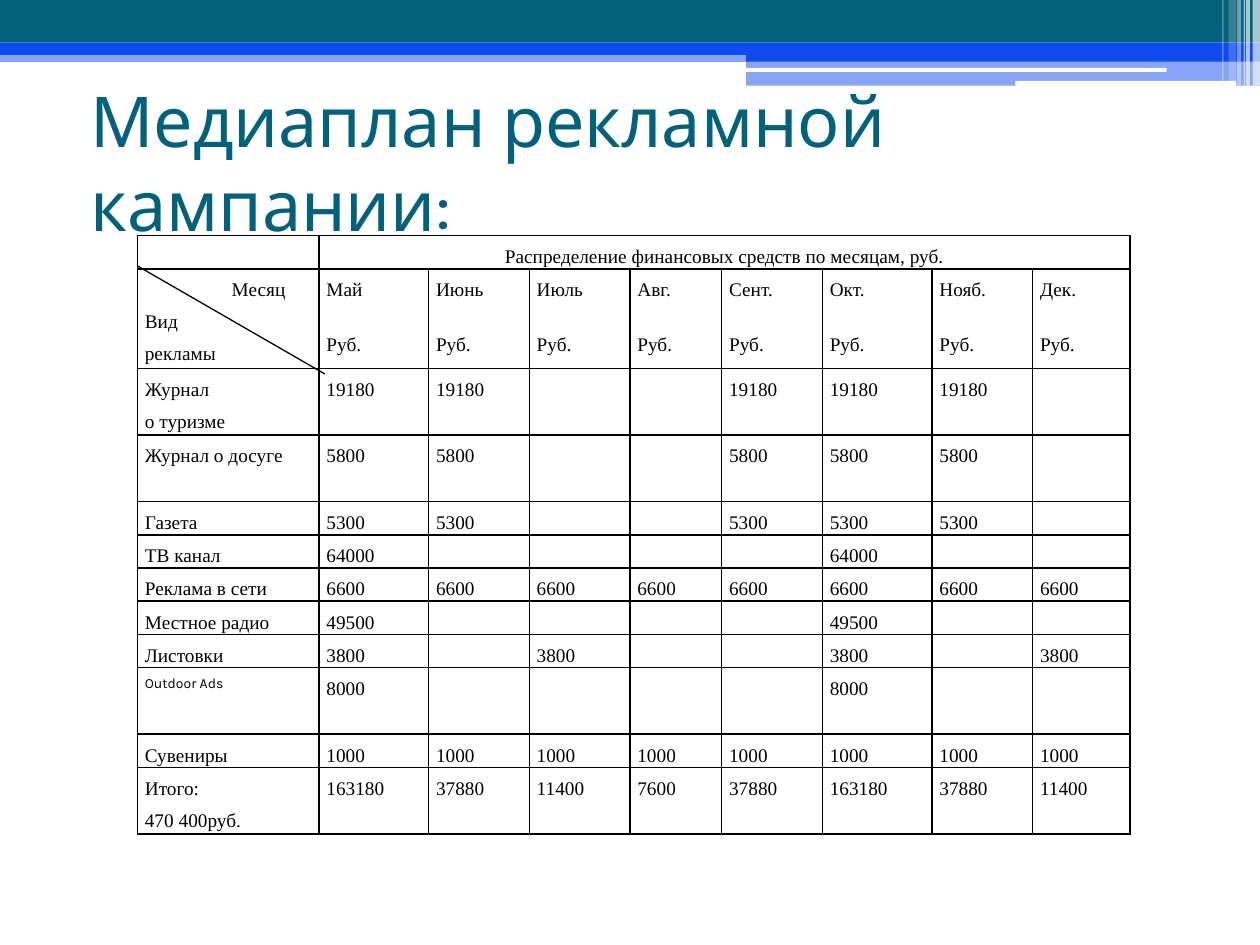
from lxml.etree import SubElement
from pptx import Presentation
from pptx.dml.color import RGBColor
from pptx.enum.shapes import MSO_CONNECTOR, MSO_SHAPE
from pptx.enum.text import MSO_ANCHOR, PP_ALIGN
from pptx.oxml.ns import qn
from pptx.util import Cm, Pt

TEAL, BLUE, WHITE, BLACK = "04617B", "104BF0", "FFFFFF", "000000"
SERIF = {"size": Pt(11), "name": "Times New Roman"}
SMALL = {"size": Pt(8), "name": "Karla"}
TITLE = {"size": Pt(40), "name": "Karla"}

# left, top, width, height, colour, opacity
BANDS = [
    (0, 1.02, 25.4, 0.23, BLUE, 50),
    (0, 0, 25.4, 0.86, TEAL, 100),
    (0, 0.86, 25.4, 0.25, BLUE, 100),
    (15.04, 0.99, 10.36, 0.25, BLUE, 100),
    (15.04, 1.22, 10.36, 0.51, BLUE, 50),
]
PILLS = [(15.01, 1.37, 8.51, 0.08), (20.47, 1.63, 4.45, 0.1)]
# left, width, height, opacity
STRIPES = [
    (25.25, 0.15, 1.73, 65), (25.12, 0.08, 1.73, 65), (25.07, 0.03, 1.73, 60),
    (24.94, 0.08, 1.73, 40), (24.77, 0.15, 1.63, 20), (24.64, 0.03, 1.63, 30),
]

COLS = [3.66, 2.21, 2.03, 2.03, 1.85, 2.03, 2.21, 2.03, 1.96]
LINE = 0.67  # height of one text line
MONTHS = ["Май", "Июнь", "Июль", "Авг.", "Сент.", "Окт.", "Нояб.", "Дек."]
# name, number of lines, values by month
ROWS = [
    ("Журнал\nо туризме", 2, "19180 19180 - - 19180 19180 19180 -"),
    ("Журнал о досуге", 2, "5800 5800 - - 5800 5800 5800 -"),
    ("Газета", 1, "5300 5300 - - 5300 5300 5300 -"),
    ("ТВ канал", 1, "64000 - - - - 64000 - -"),
    ("Реклама в сети", 1, "6600 6600 6600 6600 6600 6600 6600 6600"),
    ("Местное радио", 1, "49500 - - - - 49500 - -"),
    ("Листовки", 1, "3800 - 3800 - - 3800 - 3800"),
    ("Outdoor Ads", 2, "8000 - - - - 8000 - -"),
    ("Сувениры", 1, "1000 1000 1000 1000 1000 1000 1000 1000"),
    ("Итого:\n470 400руб.", 2,
     "163180 37880 11400 7600 37880 163180 37880 11400"),
]


def paint(fill, tint):
    fill.solid()
    fill.fore_color.rgb = RGBColor.from_string(tint)


def style(font, look, tint=BLACK):
    for key, value in look.items():
        setattr(font, key, value)
    font.color.rgb = RGBColor.from_string(tint)


def block(slide, kind, box, tint, alpha=100):
    shape = slide.shapes.add_shape(kind, *map(Cm, box))
    shape.shadow.inherit = False
    shape.line.fill.background()
    paint(shape.fill, tint)
    if alpha < 100:
        clr = shape.fill._xPr.find(".//" + qn("a:srgbClr"))
        SubElement(clr, qn("a:alpha"), val=str(alpha * 1000))


def header(slide, x, y):
    for left, top, wide, high, tint, alpha in BANDS:
        block(slide, MSO_SHAPE.RECTANGLE, (x + left, y + top, wide, high),
              tint, alpha)
    for left, top, wide, high in PILLS:
        block(slide, MSO_SHAPE.ROUNDED_RECTANGLE,
              (x + left, y + top, wide, high), WHITE)
    for left, wide, high, alpha in STRIPES:
        block(slide, MSO_SHAPE.RECTANGLE, (x + left, y, wide, high),
              WHITE, alpha)


def title(slide, box, text):
    frame = slide.shapes.add_textbox(*map(Cm, box)).text_frame
    frame.word_wrap = True
    frame.vertical_anchor = MSO_ANCHOR.MIDDLE
    run = frame.paragraphs[0].add_run()
    run.text = text
    style(run.font, TITLE, TEAL)


def border(cell):
    props = cell._tc.get_or_add_tcPr()
    for side in ("a:lnL", "a:lnR", "a:lnT", "a:lnB"):
        line = SubElement(props, qn(side), w=str(Pt(1)))
        fill = SubElement(line, qn("a:solidFill"))
        SubElement(fill, qn("a:srgbClr"), val=BLACK)


def write(cell, text="", look=SERIF, align=PP_ALIGN.JUSTIFY):
    margins = {"margin_left": Cm(0.15), "margin_right": Cm(0.15),
               "margin_top": 0, "margin_bottom": 0}
    for key, value in margins.items():
        setattr(cell, key, value)
    border(cell)
    cell.fill.background()
    frame = cell.text_frame
    for i, words in enumerate(text.split("\n")):
        para = frame.add_paragraph() if i else frame.paragraphs[0]
        para.alignment = align
        # one and a half lines of the cell's font
        para.line_spacing = Pt(18.3 if look is SERIF else 14)
        if words:
            run = para.add_run()
            run.text = words
            style(run.font, look)
        else:
            # keeps empty cells from stretching their row
            SubElement(para._p, qn("a:endParaRPr"), sz="1100")


def plan(slide, x, y):
    lines = [1, 3] + [row[1] for row in ROWS]
    grid = slide.shapes.add_table(
        len(lines), len(COLS), Cm(x), Cm(y),
        Cm(sum(COLS)), Cm(LINE * sum(lines))).table
    grid.first_row = grid.horz_banding = False
    for col, wide in zip(grid.columns, COLS):
        col.width = Cm(wide)
    for row, count in zip(grid.rows, lines):
        row.height = Cm(LINE * count)

    # Heading row
    write(grid.cell(0, 0))
    write(grid.cell(0, 1), "Распределение финансовых средств по месяцам, руб.",
          align=PP_ALIGN.CENTER)
    for c in range(2, len(COLS)):
        write(grid.cell(0, c))
    grid.cell(0, 1).merge(grid.cell(0, len(COLS) - 1))

    # Month row
    corner = grid.cell(1, 0)
    write(corner, "Месяц\nВид\nрекламы")
    first = corner.text_frame.paragraphs[0]._p.get_or_add_pPr()
    first.set("marL", str(Cm(1.75)))
    for c, month in enumerate(MONTHS, 1):
        cell = grid.cell(1, c)
        write(cell, month + "\nРуб.")
        cell.text_frame.paragraphs[1].space_before = Pt(13)

    # Spending rows
    for r, (name, _, values) in enumerate(ROWS, 2):
        write(grid.cell(r, 0), name, SMALL if "Outdoor" in name else SERIF)
        for c, value in enumerate(values.split(), 1):
            write(grid.cell(r, c), value.strip("-"))

    # Diagonal of the corner cell
    line = slide.shapes.add_connector(
        MSO_CONNECTOR.STRAIGHT, Cm(x), Cm(y + 0.61),
        Cm(x + 3.78), Cm(y + 2.79))
    line.line.width = Pt(0.75)
    paint(line.line.fill, BLACK)
    SubElement(line._element.spPr, qn("a:effectLst"))


def main():
    deck = Presentation()
    deck.slide_width, deck.slide_height = Cm(25.4), Cm(19.05)
    slide = deck.slides.add_slide(deck.slide_layouts[6])
    paint(slide.background.fill, WHITE)
    header(slide, 0, 0)
    title(slide, (1.57, 1.78, 22.86, 2.97), "Медиаплан рекламной кампании:")
    plan(slide, 2.77, 4.75)
    deck.save("out.pptx")


if __name__ == "__main__":
    main()
